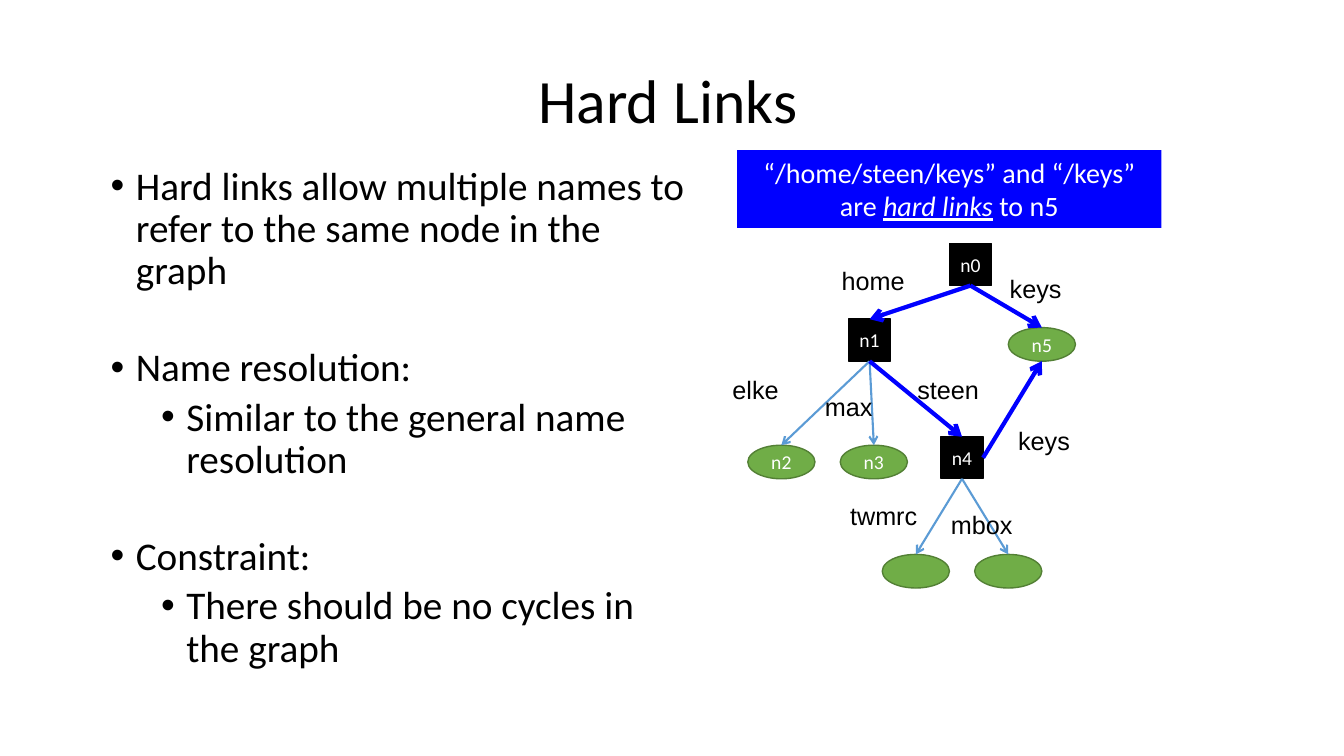
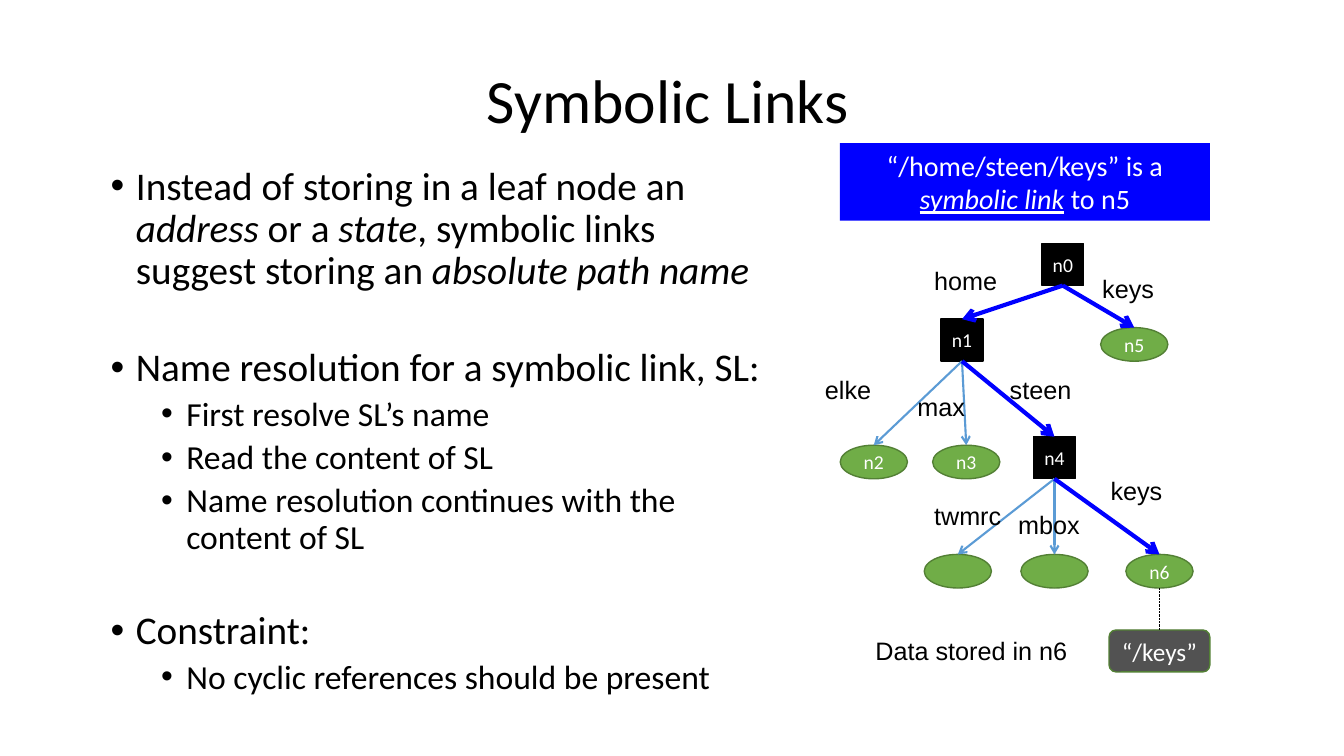
from lxml.etree import SubElement
from pptx import Presentation
from pptx.dml.color import RGBColor
from pptx.enum.dml import MSO_LINE
from pptx.enum.shapes import MSO_CONNECTOR, MSO_SHAPE
from pptx.enum.text import MSO_ANCHOR, PP_ALIGN
from pptx.oxml.ns import qn
from pptx.util import Inches, Pt

BLACK = RGBColor(0x00, 0x00, 0x00)
WHITE = RGBColor(0xFF, 0xFF, 0xFF)
BLUE = RGBColor(0x00, 0x00, 0xFF)
PALE_BLUE = RGBColor(0x5B, 0x9B, 0xD5)
GREEN = RGBColor(0x70, 0xAD, 0x47)
DARK_GREEN = RGBColor(0x53, 0x80, 0x35)
GRAY = RGBColor(0x52, 0x52, 0x52)

CELL = Inches(1) / 12
GRAPH_TOP = 29  # rows of the grid
TOP, BOTTOM, RIGHT = 0, 2, 3  # connection sites of a rectangle

# Nodes and labels: column and row inside the graph
DIRECTORIES = {"n0": (27, 0), "n1": (15, 9), "n4": (26, 23)}
LEAVES = {"n5": (34, 10), "n2": (3, 24), "n3": (14, 24)}
LABELS = [("home", 13, 2), ("keys", 33, 3), ("steen", 22, 15),
          ("max", 11, 17), ("elke", 0, 15)]
PLAIN_EDGES = [("n1", "n2"), ("n1", "n3"), ("n4", "twmrc"), ("n4", "mbox")]
PATH_EDGES = [("n0", "n1"), ("n0", "n5"), ("n1", "n4")]


def write(tf, text, size=18, font="Calibri", color=BLACK, align=PP_ALIGN.LEFT,
          underline=False, spacing=1.0, before=0, bullet=None, first=True):
    """Add a paragraph; parts between asterisks are italic."""
    p = tf.paragraphs[0] if first else tf.add_paragraph()
    p.alignment, p.line_spacing, p.space_before = align, spacing, Pt(before)
    if bullet is not None:
        pPr = p._p.get_or_add_pPr()
        pPr.set("marL", str(Inches(bullet)))
        pPr.set("indent", str(-Inches(0.25)))
        SubElement(pPr, qn("a:buFont"), typeface="Arial")
        SubElement(pPr, qn("a:buChar"), char="•")
    for i, part in enumerate(text.split("*")):
        if part:
            r = p.add_run()
            r.text = part
            r.font.name, r.font.size = font, Pt(size)
            r.font.color.rgb = color
            r.font.italic = i % 2 == 1
            r.font.underline = underline and i % 2 == 1


def add_textbox(s, x, y, w, h, anchor=MSO_ANCHOR.TOP):
    tf = s.shapes.add_textbox(int(x), int(y), int(w), int(h)).text_frame
    tf.word_wrap = True
    tf.vertical_anchor = anchor
    return tf


def add_block(s, kind, box, fill, line=None, text="", inset=0.0, **fmt):
    sp = s.shapes.add_shape(kind, *(int(v) for v in box))
    sp.shadow.inherit = False
    sp.fill.solid()
    sp.fill.fore_color.rgb = fill
    if line is None:
        sp.line.fill.background()
    else:
        sp.line.color.rgb, sp.line.width = line, Pt(1)
    tf = sp.text_frame
    tf.word_wrap = True
    tf.vertical_anchor = MSO_ANCHOR.MIDDLE
    tf.margin_left = tf.margin_right = Inches(inset)
    tf.margin_top = tf.margin_bottom = 0
    write(tf, text, color=WHITE, align=PP_ALIGN.CENTER, **fmt)
    return sp


def site_point(sp, site):
    dx, dy = {TOP: (0.5, 0), BOTTOM: (0.5, 1), RIGHT: (1, 0.5)}[site]
    return int(sp.left + dx * sp.width), int(sp.top + dy * sp.height)


def can_glue(sp, site):
    return site == TOP or sp.auto_shape_type == MSO_SHAPE.RECTANGLE


def add_link(s, start, end, start_site=BOTTOM, end_site=TOP,
             color=PALE_BLUE, width=1.5, dotted=False):
    """Join two nodes with an arrow, or with a dotted line."""
    cx = s.shapes.add_connector(MSO_CONNECTOR.STRAIGHT,
                                *site_point(start, start_site), *site_point(end, end_site))
    if can_glue(start, start_site):
        cx.begin_connect(start, start_site)
    if can_glue(end, end_site):
        cx.end_connect(end, end_site)
    cx.line.color.rgb, cx.line.width = color, Pt(width)
    if dotted:
        cx.line.dash_style = MSO_LINE.ROUND_DOT
    else:
        SubElement(cx.line._get_or_add_ln(), qn("a:tailEnd"), type="arrow")
    SubElement(cx._element.spPr, qn("a:effectLst"))


def add_title(s, text):
    tf = add_textbox(s, Inches(1.92), Inches(0.3), Inches(9.41), Inches(1.45),
                     MSO_ANCHOR.MIDDLE)
    write(tf, text, size=44, align=PP_ALIGN.CENTER, spacing=0.9)


def add_bullets(s, width, sections, sub_size):
    """Sections are a heading followed by its sub-points."""
    tf = add_textbox(s, Inches(0.5), Inches(1.6), Inches(width), Inches(5.42))
    for i, (heading, *points) in enumerate(sections):
        write(tf, heading, size=28, spacing=0.9, bullet=0.75,
              before=39 if i else 0, first=i == 0)
        for point in points:
            write(tf, point, size=sub_size, spacing=0.9, bullet=1.25,
                  before=5, first=False)


def add_callout(s, x, y, w, text):
    add_block(s, MSO_SHAPE.RECTANGLE, [Inches(v) for v in (x, y, w, 0.77)],
              BLUE, text=text, inset=0.1, size=20, underline=True)


def add_graph(s, left, leaves, labels):
    """Draw the naming graph from column left; return its nodes and a cell-to-box function."""
    def box(col, row, cols, rows):
        return [v * CELL for v in (left + col, GRAPH_TOP + row, cols, rows)]

    nodes = {}
    for name, (col, row) in DIRECTORIES.items():
        nodes[name] = add_block(s, MSO_SHAPE.RECTANGLE, box(col, row, 5, 5),
                                BLACK, BLACK, name, size=14)
    for name, (col, row) in {**LEAVES, **leaves}.items():
        nodes[name] = add_block(s, MSO_SHAPE.OVAL, box(col, row, 8, 4), GREEN, DARK_GREEN,
                                name if name.startswith("n") else "", size=14)
    for start, end in PLAIN_EDGES:
        add_link(s, nodes[start], nodes[end])
    for text, col, row in LABELS + labels:
        write(add_textbox(s, *box(col, row, 12, 5)), text, font="Arial")
    for start, end in PATH_EDGES:
        add_link(s, nodes[start], nodes[end], color=BLUE, width=3)
    return nodes, box


def hard_links_slide(s):
    add_title(s, "Hard Links")
    add_bullets(s, 6.4, [
        ("Hard links allow multiple names to refer to the same node in the graph",),
        ("Name resolution:", "Similar to the general name resolution"),
        ("Constraint:", "There should be no cycles in the graph"),
    ], sub_size=28)
    add_callout(s, 7.31, 1.49, 4.21,
                "“/home/steen/keys” and “/keys” are *hard links* to n5")
    nodes, _ = add_graph(s, 86, {"mbox": (30, 37), "twmrc": (19, 37)},
                         [("twmrc", 14, 30), ("mbox", 26, 31), ("keys", 34, 21)])
    add_link(s, nodes["n4"], nodes["n5"], RIGHT, BOTTOM, color=BLUE, width=3)


def symbolic_links_slide(s):
    add_title(s, "Symbolic Links")
    add_bullets(s, 7.16, [
        ("Instead of storing in a leaf node an *address* or a *state*, "
         "symbolic links suggest storing an *absolute path name*",),
        ("Name resolution for a symbolic link, SL:", "First resolve SL’s name",
         "Read the content of SL", "Name resolution continues with the content of SL"),
        ("Constraint:", "No cyclic references should be present"),
    ], sub_size=24)
    add_callout(s, 8.33, 1.42, 3.67, "“/home/steen/keys” is a *symbolic link* to n5")
    nodes, box = add_graph(s, 97, {"mbox": (24.5, 37), "twmrc": (13, 37), "n6": (37, 37)},
                           [("twmrc", 13, 30), ("mbox", 23, 31), ("keys", 34, 27)])
    add_link(s, nodes["n4"], nodes["n6"], color=BLUE, width=3)
    data = add_block(s, MSO_SHAPE.ROUNDED_RECTANGLE, box(35, 46, 12, 5),
                     GRAY, DARK_GREEN, "“/keys”")
    add_link(s, data, nodes["n6"], TOP, BOTTOM, color=BLACK, width=0.5, dotted=True)
    write(add_textbox(s, *box(6, 46, 27, 5)), "Data stored in n6", font="Arial")


def main():
    prs = Presentation()
    prs.slide_width, prs.slide_height = Inches(13.33), Inches(7.5)
    for build in (hard_links_slide, symbolic_links_slide):
        build(prs.slides.add_slide(prs.slide_layouts[6]))
    prs.save("out.pptx")


if __name__ == "__main__":
    main()
